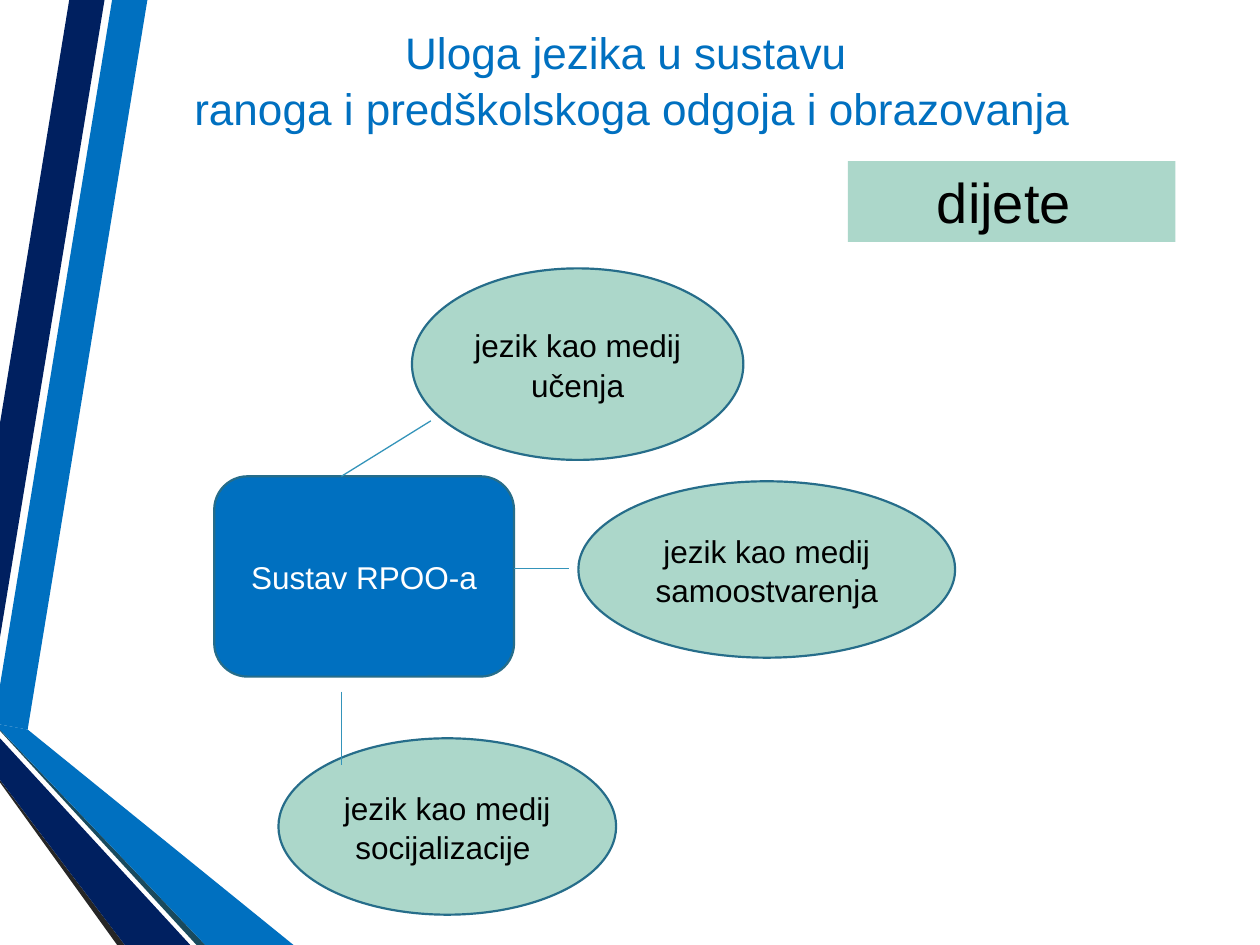
from pptx import Presentation
from pptx.util import Inches, Pt
from pptx.dml.color import RGBColor
from pptx.enum.shapes import MSO_SHAPE, MSO_CONNECTOR
from pptx.enum.text import PP_ALIGN, MSO_ANCHOR, MSO_AUTO_SIZE
from pptx.oxml.ns import qn
from lxml.etree import SubElement

THEME = dict(
    font="Arial", blue="0070C0", navy="002060", dark="262626", teal="1A4A5D",
    mint="ACD7CA", edge="266D8A", link="3494BA", black="000000", white="FFFFFF",
    head=25.2, body=18, big=32)

# Content: wording and places in inches
TITLE = "Uloga jezika u sustavu \vranoga i predškolskoga odgoja i obrazovanja"
OVAL, ROUND = MSO_SHAPE.OVAL, MSO_SHAPE.ROUNDED_RECTANGLE
NODES = [
    ("jezik kao medij socijalizacije ", OVAL, (2.21, 5.86, 2.68, 1.4), "mint", "black"),
    ("Sustav RPOO-a", ROUND, (1.7, 3.78, 2.38, 1.59), "blue", "white"),
    ("jezik kao medij\nučenja", OVAL, (3.27, 2.13, 2.63, 1.52), "mint", "black"),
    ("jezik kao medij samoostvarenja", OVAL, (4.59, 3.82, 2.99, 1.4), "mint", "black"),
]
LINKS = [(2.71, 3.78, 3.42, 3.34), (2.71, 5.49, 2.71, 6.07), (4.08, 4.51, 4.52, 4.51)]
BANDS = [
    ("blue", [(0, 5.44), (0, 5.75), (0.22, 5.79), (1.17, 0), (0.89, 0)]),
    ("navy", [(0.83, 0), (0.55, 0), (0, 3.36), (0, 5.06)]),
    ("dark", [(0, 6.19), (0, 6.21), (0.93, 7.5), (0.99, 7.5)]),
    ("teal", [(0, 5.79), (0, 5.8), (1.56, 7.5), (1.63, 7.5)]),
    ("blue", [(0, 5.79), (1.63, 7.5), (2.33, 7.5), (0.22, 5.79), (0, 5.75)]),
    ("navy", [(0, 6.19), (0.99, 7.5), (1.51, 7.5), (0, 5.86)]),
]


def color(name):
    return RGBColor.from_string(THEME[name])


def write(shape, text, size="body", ink="black", anchor=MSO_ANCHOR.MIDDLE, space=1.05):
    frame = shape.text_frame
    frame.word_wrap = True
    frame.vertical_anchor = anchor
    frame.text = text
    for para in frame.paragraphs:
        para.alignment = PP_ALIGN.CENTER
        para.line_spacing = space
        for run in para.runs:
            run.font.name = THEME["font"]
            run.font.size = Pt(THEME[size])
            run.font.color.rgb = color(ink)


def paint(shape, fill, edge=None):
    shape.shadow.inherit = False
    shape.fill.solid()
    shape.fill.fore_color.rgb = color(fill)
    if edge:
        shape.line.color.rgb = color(edge)
        shape.line.width = Pt(1.25)
    else:
        shape.line.fill.background()


def main():
    deck = Presentation()
    deck.slide_width, deck.slide_height = Inches(10), Inches(7.5)
    slide = deck.slides.add_slide(deck.slide_layouts[5])
    shapes = slide.shapes

    # Ribbon at the left edge
    for fill, points in BANDS:
        spots = [(Inches(x), Inches(y)) for x, y in points]
        pen = shapes.build_freeform(*spots[0])
        pen.add_line_segments(spots[1:], close=True)
        paint(pen.convert_to_shape(), fill)

    # Title
    title = shapes.title
    title.left, title.top = Inches(0.55), Inches(0.13)
    title.width, title.height = Inches(8.93), Inches(0.99)
    write(title, TITLE, size="head", ink="blue")

    # Diagram nodes
    for text, kind, box, fill, ink in NODES:
        node = shapes.add_shape(kind, *map(Inches, box))
        paint(node, fill, "edge")
        write(node, text, ink=ink)

    # Links between nodes
    for ends in LINKS:
        link = shapes.add_connector(MSO_CONNECTOR.STRAIGHT, *map(Inches, ends))
        link.line.color.rgb = color("link")
        link.line.width = Pt(0.75)
        SubElement(link._element.spPr, qn("a:effectLst"))

    # Label
    label = shapes.add_shape(MSO_SHAPE.RECTANGLE, *map(Inches, (6.73, 1.28, 2.6, 0.64)))
    paint(label, "mint")
    write(label, "dijete ", size="big", anchor=MSO_ANCHOR.TOP, space=1.0)
    label.text_frame.auto_size = MSO_AUTO_SIZE.SHAPE_TO_FIT_TEXT

    deck.save("out.pptx")


if __name__ == "__main__":
    main()
